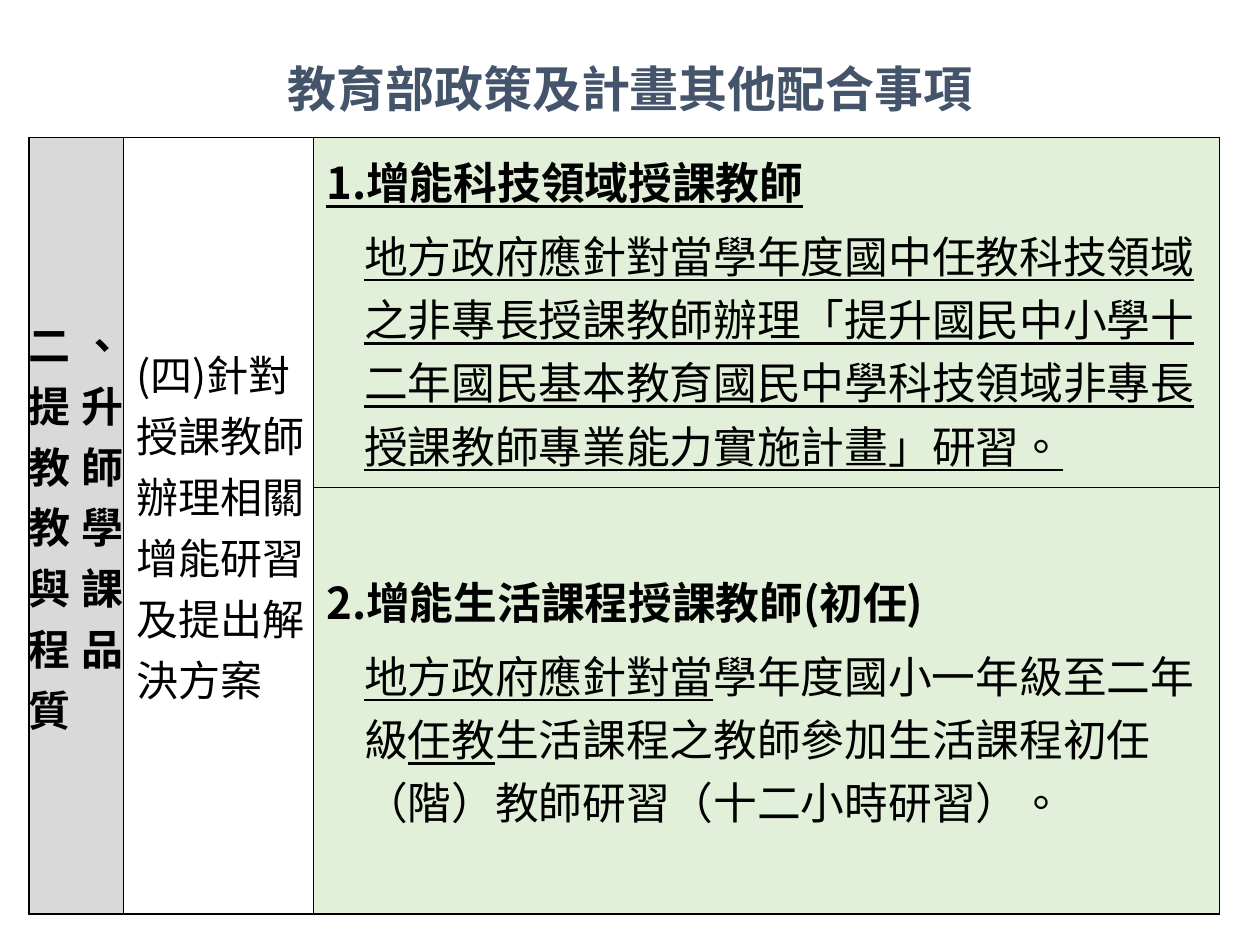
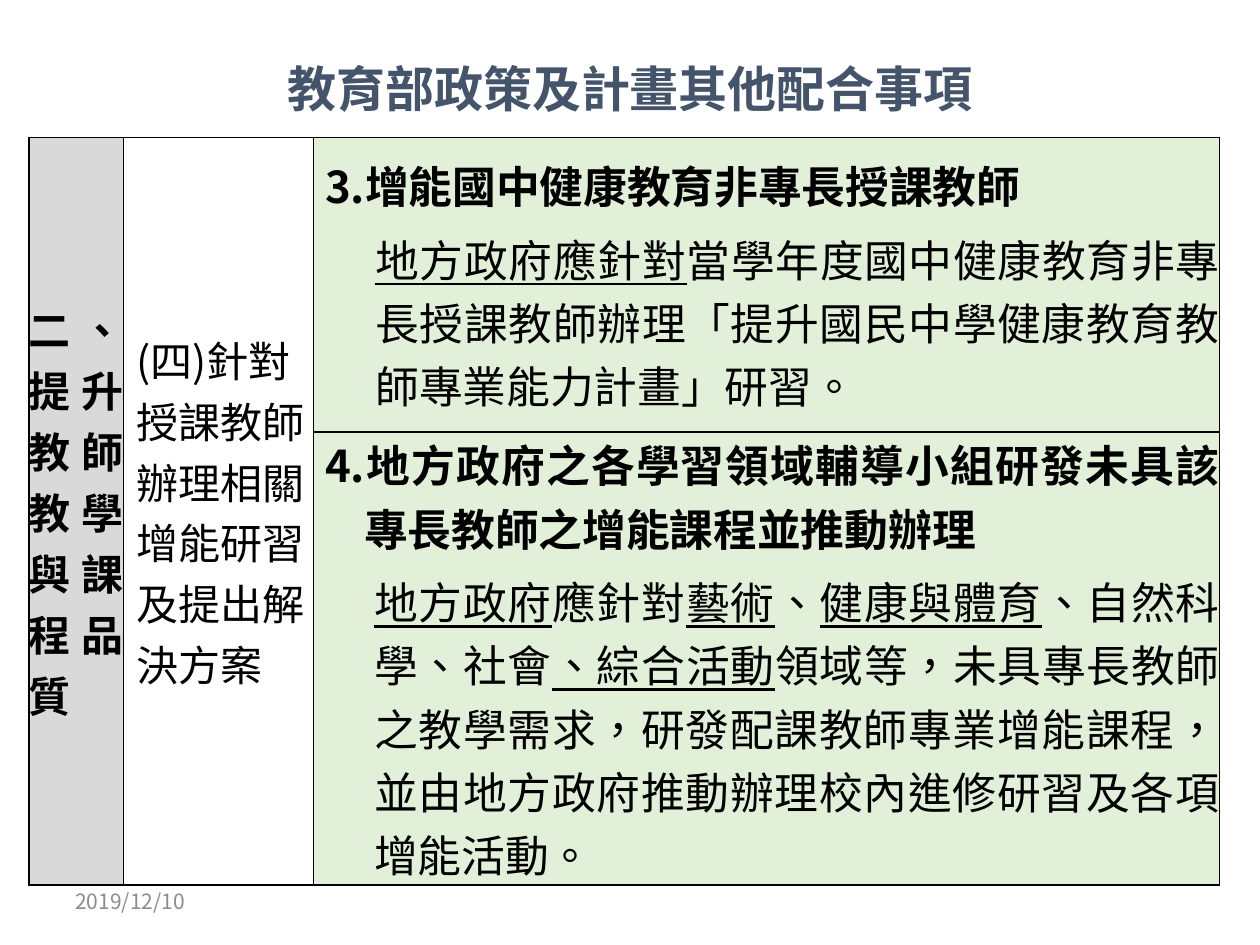
from itertools import product

from lxml.etree import SubElement
from pptx import Presentation
from pptx.dml.color import RGBColor
from pptx.enum.text import MSO_ANCHOR, PP_ALIGN
from pptx.oxml import parse_xml
from pptx.oxml.ns import nsdecls, qn
from pptx.util import Inches, Pt

SANS = "Noto Sans CJK SC"
SERIF = "Times New Roman"
COLORS = {
    "title": "44546A",
    "text": "000000",
    "date": "8C8C8C",
    "border": "000000",
    "goal": "D9D9D9",
    "task": "FFFFFF",
    "action": "E2F0D9",
}
JUSTIFY = PP_ALIGN.JUSTIFY

# A paragraph is (runs, left indent, first line indent, alignment, space before);
# a run is (text, format values).
TITLE = "教育部政策及計畫其他配合事項"
GOAL = [([("二、提升教師教學與課程品質", {"size": Pt(24), "bold": True, "name": SERIF})],
         0, 0, JUSTIFY, 0)]
TASK = [([("(四)針對授課教師辦理相關增能研習及提出解決方案", {"size": Pt(24)})],
         0.1, 0, None, 0)]

BOLD = {"bold": True}
PLAIN = {}
LINED = {"underline": True}

SLIDES = [
    {
        "row_heights": [2.78, 2.22],
        "align": None,
        "actions": [
            [
                (0.1, 0, [("1.增能科技領域授課教師", BOLD | LINED)]),
                (0.4, 0, [("地方政府應針對當學年度國中任教科技領域之非專長授課教師辦理"
                           "「提升國民中小學十二年國民基本教育國民中學科技領域非專長"
                           "授課教師專業能力實施計畫」研習。", LINED)]),
            ],
            [
                (0.1, 0, [("2.增能生活課程授課教師(初任)", BOLD)]),
                (0.4, 0, [("地方政府應針對當", LINED),
                          ("學年度國小一年級至二年級", PLAIN),
                          ("任教", LINED),
                          ("生活課程之教師參加生活課程初任（階）教師研習"
                           "（十二小時研習）。", PLAIN)]),
            ],
        ],
    },
    {
        "row_heights": [2.34, 3.3],
        "align": JUSTIFY,
        "date": "2019/12/10",
        "actions": [
            [
                (0.09, 0, [("3.增能國中健康教育非專長授課教師", BOLD)]),
                (0.49, 0, [("地方政府應針對", LINED),
                           ("當學年度國中健康教育非專長授課教師辦理"
                            "「提升國民中學健康教育教師專業能力計畫」研習。", PLAIN)]),
            ],
            [
                (0.4, -0.31, [("4.地方政府之各學習領域輔導小組研發未具該"
                               "專長教師之增能課程並推動辦理", BOLD)]),
                (0.48, 0, [("地方政府", LINED),
                           ("應針對", PLAIN),
                           ("藝術", LINED),
                           ("、", PLAIN),
                           ("健康與體育", LINED),
                           ("、自然科學、社會", PLAIN),
                           ("、綜合活動", LINED),
                           ("領域等，未具專長教師之教學需求，研發配課教師專業增能課程，"
                            "並由地方政府推動辦理校內進修研習及各項增能活動。", PLAIN)]),
            ],
        ],
    },
]

TABLE_LEFT, TABLE_TOP = 0.23, 1.09
COLUMN_WIDTHS = [0.75, 1.51, 7.19]
COLUMN_FILLS = ["goal", "task", "action"]


def add_run(paragraph, text, color="text", **formats):
    run = paragraph.add_run()
    run.text = text
    values = {"name": SANS, "size": Pt(25), "bold": False, "underline": False} | formats
    for attribute, value in values.items():
        setattr(run.font, attribute, value)
    run.font.color.rgb = RGBColor.from_string(COLORS[color])
    properties = run._r.get_or_add_rPr()
    properties.set("lang", "zh-TW")
    SubElement(properties, qn("a:ea")).set("typeface", SANS)


def fill_text(frame, paragraphs):
    for index, (runs, left, first, align, before) in enumerate(paragraphs):
        paragraph = frame.add_paragraph() if index else frame.paragraphs[0]
        paragraph.alignment = align
        paragraph.space_before = Pt(before if index else 0)
        properties = paragraph._p.get_or_add_pPr()
        properties.set("marL", str(Inches(left)))
        properties.set("indent", str(Inches(first)))
        for text, formats in runs:
            add_run(paragraph, text, **formats)


def style_cell(cell, fill):
    cell.vertical_anchor = MSO_ANCHOR.MIDDLE
    for side in ("left", "right", "top", "bottom"):
        setattr(cell, f"margin_{side}", 0)
    cell.fill.solid()
    cell.fill.fore_color.rgb = RGBColor.from_string(COLORS[fill])
    properties = cell._tc.get_or_add_tcPr()
    for position, edge in enumerate("LRTB"):
        properties.insert(position, parse_xml(
            f'<a:ln{edge} {nsdecls("a")} w="{Pt(1)}"><a:solidFill>'
            f'<a:srgbClr val="{COLORS["border"]}"/></a:solidFill></a:ln{edge}>'))


def add_title(slide):
    title = slide.shapes.title
    title.left, title.top, title.width, title.height = map(Inches, (0.5, 0.3, 9, 0.79))
    title.text_frame.vertical_anchor = MSO_ANCHOR.MIDDLE
    paragraph = title.text_frame.paragraphs[0]
    paragraph.alignment = PP_ALIGN.CENTER
    add_run(paragraph, TITLE, "title", size=Pt(28), bold=True)


def add_plan_table(slide, content):
    heights = content["row_heights"]
    box = map(Inches, (TABLE_LEFT, TABLE_TOP, sum(COLUMN_WIDTHS), sum(heights)))
    table = slide.shapes.add_table(len(heights), len(COLUMN_WIDTHS), *box).table
    table.first_row = table.horz_banding = False
    for column, width in zip(table.columns, COLUMN_WIDTHS):
        column.width = Inches(width)
    for row, height in zip(table.rows, heights):
        row.height = Inches(height)
    for row, column in product(range(len(heights)), range(len(COLUMN_WIDTHS))):
        style_cell(table.cell(row, column), COLUMN_FILLS[column])

    for column, paragraphs in enumerate((GOAL, TASK)):
        table.cell(0, column).merge(table.cell(len(heights) - 1, column))
        fill_text(table.cell(0, column).text_frame, paragraphs)
    for row, action in enumerate(content["actions"]):
        paragraphs = [(runs, left, first, content["align"], 6)
                      for left, first, runs in action]
        fill_text(table.cell(row, 2).text_frame, paragraphs)


def add_date(slide, date):
    frame = slide.shapes.add_textbox(*map(Inches, (0.5, 6.95, 2.33, 0.4))).text_frame
    frame.word_wrap = True
    frame.vertical_anchor = MSO_ANCHOR.MIDDLE
    add_run(frame.paragraphs[0], date, "date", size=Pt(12))


def main():
    deck = Presentation()
    deck.slide_width, deck.slide_height = Inches(10), Inches(7.5)
    title_only = deck.slide_layouts[5]
    for content in SLIDES:
        slide = deck.slides.add_slide(title_only)
        add_title(slide)
        add_plan_table(slide, content)
        if "date" in content:
            add_date(slide, content["date"])
    deck.save("out.pptx")


if __name__ == "__main__":
    main()
